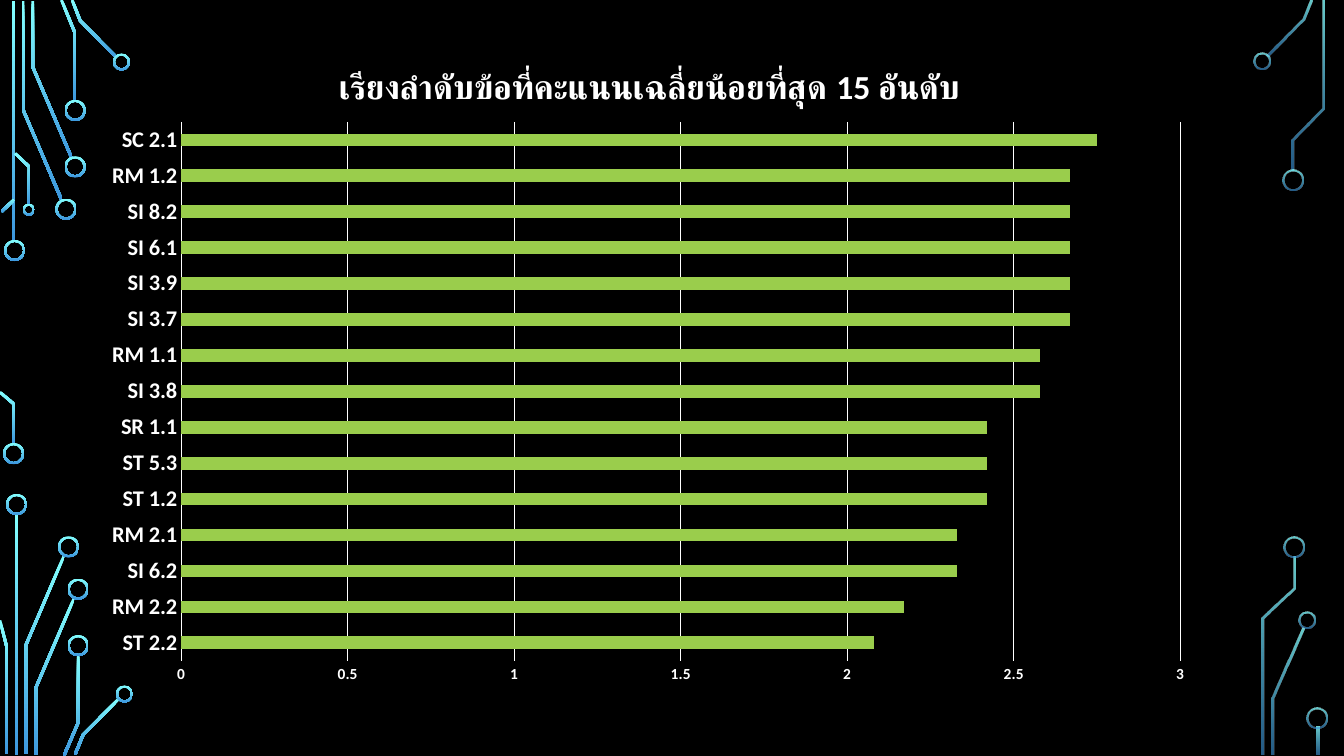
import math
from dataclasses import dataclass

import pptx
import pptx.chart.data
import pptx.dml.color
import pptx.enum.chart
import pptx.enum.shapes
import pptx.oxml
import pptx.oxml.ns
import pptx.util
from lxml import etree


@dataclass(frozen=True)
class Theme:
    background: str = "000000"
    text: str = "FFFFFF"
    bar: str = "9ACD4C"
    trace_top: str = "82FFFF"
    trace_bottom: str = "3D97DE"
    font: str = "Calibri"
    title_size: int = 24
    category_size: int = 16
    value_size: int = 11
    chart_size: int = 10
    line_width: float = 0.75


COLUMNS, ROWS = 1333, 750
TRACE_WIDTH = 2.75
RING_WIDTH = 2
BRIGHT = (100, 100)
DIM = (80, 60)

TITLE = "เรียงลำดับข้อที่คะแนนเฉลี่ยน้อยที่สุด 15 อันดับ"
SCORES = [
    ("ST 2.2", 2.08), ("RM 2.2", 2.17), ("SI 6.2", 2.33), ("RM 2.1", 2.33),
    ("ST 1.2", 2.42), ("ST 5.3", 2.42), ("SR 1.1", 2.42), ("SI 3.8", 2.58),
    ("RM 1.1", 2.58), ("SI 3.7", 2.67), ("SI 3.9", 2.67), ("SI 6.1", 2.67),
    ("SI 8.2", 2.67), ("RM 1.2", 2.67), ("SC 2.1", 2.75),
]
PLOT_PERCENT = {"x": 8.09, "y": 12.58, "w": 89.44, "h": 82}

LEFT_STEMS = [(12, 1, 239), (15, 510, 239)]
LEFT_TRACES = [
    [(61, 198), (23, 109), (23, 1)],
    [(71, 156.5), (32.5, 66.5), (32.5, 1)],
    [(74.5, 100), (74.5, 33), (61, 0)],
    [(115.5, 57), (79.5, 20.5), (71.5, 0)],
    [(1.5, 210), (14, 198)],
    [(14, 441), (14, 401), (0, 389)],
    [(29, 203), (29, 165.5), (15, 152)],
    [(25.5, 748), (25.5, 640.5), (63.5, 551.5)],
    [(6.5, 748), (6.5, 641), (0, 615.5)],
    [(35.5, 749), (35.5, 682.5), (73.5, 593.5)],
    [(63.5, 749.5), (77.5, 717), (77.5, 650)],
    [(74.5, 748.5), (82.5, 729), (118, 693)],
]
LEFT_RINGS = [
    (14.5, 248.5, 21), (13.5, 450, 21), (65.5, 207.5, 21), (74.5, 165.5, 21),
    (74.5, 109.5, 21), (120.5, 61.5, 17), (28.5, 208, 12), (16.5, 500.5, 21),
    (68, 542.5, 21), (77.5, 584.5, 21), (77.5, 640.5, 21), (123.5, 688.5, 17),
]
RIGHT_STEMS = [(1306, 721, 28)]
RIGHT_TRACES = [
    [(1257, 55.5), (1292.5, 19.5), (1300.5, 0.5)],
    [(1262.5, 749), (1262.5, 693), (1293, 623.5)],
    [(1282, 169), (1282, 138.5), (1312.5, 107.5), (1312.5, 1)],
    [(1252.5, 749), (1252.5, 613.5), (1283.5, 583.5), (1283.5, 552)],
]
RIGHT_RINGS = [
    (1251.5, 60.5, 17), (1282.5, 178.5, 21), (1296.5, 615.5, 17),
    (1283, 542.5, 21), (1306.5, 712, 21),
]


def rgb(color):
    return pptx.dml.color.RGBColor.from_string(color)


def trace_outline(points, width):
    normals = []
    for (x1, y1), (x2, y2) in zip(points, points[1:]):
        length = math.hypot(x2 - x1, y2 - y1)
        normals.append(((y1 - y2) / length, (x2 - x1) / length))
    near, far = [], []
    for (x, y), (ax, ay), (bx, by) in zip(points, normals[:1] + normals, normals + normals[-1:]):
        scale = width / 2 / (1 + ax * bx + ay * by)
        dx, dy = (ax + bx) * scale, (ay + by) * scale
        near.append((x + dx, y + dy))
        far.append((x - dx, y - dy))
    return near + far[::-1]


class SlideBuilder:
    def __init__(self, presentation, theme):
        self.theme = theme
        self.column = presentation.slide_width / COLUMNS
        self.row = presentation.slide_height / ROWS
        self.slide = presentation.slides.add_slide(presentation.slide_layouts[6])
        self.slide.background.fill.solid()
        self.slide.background.fill.fore_color.rgb = rgb(theme.background)

    def place(self, x, y):
        return round(x * self.column), round(y * self.row)

    def glow(self, shape, opacities):
        shape.shadow.inherit = False
        shape.line.fill.background()
        shape.fill.gradient()
        shape.fill.gradient_angle = 270
        colors = (self.theme.trace_top, self.theme.trace_bottom)
        for stop, color, position in zip(shape.fill.gradient_stops, colors, (0, 1)):
            stop.color.rgb = rgb(color)
            stop.position = position
        color_elements = shape._element.spPr.iter(pptx.oxml.ns.qn("a:srgbClr"))
        for element, opacity in zip(color_elements, opacities):
            if opacity < 100:
                alpha = etree.SubElement(element, pptx.oxml.ns.qn("a:alpha"))
                alpha.set("val", str(opacity * 1000))

    def preset(self, kind, left, top, width, height, opacities):
        shape = self.slide.shapes.add_shape(
            kind, *self.place(left, top), *self.place(width, height))
        self.glow(shape, opacities)
        return shape

    def stem(self, left, top, height, opacities):
        self.preset(pptx.enum.shapes.MSO_SHAPE.RECTANGLE,
                    left, top, TRACE_WIDTH, height, opacities)

    def ring(self, x, y, size, opacities):
        shape = self.preset(pptx.enum.shapes.MSO_SHAPE.DONUT,
                            x - size / 2, y - size / 2, size, size, opacities)
        shape.adjustments[0] = RING_WIDTH / size

    def trace(self, points, opacities):
        start, *others = [self.place(*point) for point in trace_outline(points, TRACE_WIDTH)]
        builder = self.slide.shapes.build_freeform(*start)
        builder.add_line_segments(others, close=True)
        self.glow(builder.convert_to_shape(), opacities)

    def circuit(self, stems, traces, rings, opacities):
        for stem in stems:
            self.stem(*stem, opacities)
        for points in traces:
            self.trace(points, opacities)
        for ring in rings:
            self.ring(*ring, opacities)

    def style_font(self, font, size, bold):
        font.name = self.theme.font
        font.size = pptx.util.Pt(size)
        font.bold = bold
        font.color.rgb = rgb(self.theme.text)

    def style_line(self, line):
        line.color.rgb = rgb(self.theme.text)
        line.width = pptx.util.Pt(self.theme.line_width)

    def bar_chart(self, left, top, width, height):
        data = pptx.chart.data.CategoryChartData()
        data.categories = [name for name, score in SCORES]
        data.add_series("Series 1", [score for name, score in SCORES])
        chart = self.slide.shapes.add_chart(
            pptx.enum.chart.XL_CHART_TYPE.BAR_CLUSTERED,
            *self.place(left, top), *self.place(width, height), data).chart
        self.style_font(chart.font, self.theme.chart_size, False)
        chart.has_legend = False
        chart.has_title = True
        chart.chart_title.include_in_layout = False
        paragraph = chart.chart_title.text_frame.paragraphs[0]
        paragraph.text = TITLE
        self.style_font(paragraph.font, self.theme.title_size, True)

        plot = chart.plots[0]
        plot.gap_width = 182
        plot.vary_by_categories = False
        bars = plot.series[0].format.fill
        bars.solid()
        bars.fore_color.rgb = rgb(self.theme.bar)

        sizes = (self.theme.category_size, self.theme.value_size)
        for axis, size in zip((chart.category_axis, chart.value_axis), sizes):
            axis.major_tick_mark = pptx.enum.chart.XL_TICK_MARK.NONE
            axis.minor_tick_mark = pptx.enum.chart.XL_TICK_MARK.NONE
            self.style_font(axis.tick_labels.font, size, True)
        self.style_line(chart.category_axis.format.line)
        values = chart.value_axis
        values.minimum_scale, values.maximum_scale, values.major_unit = 0, 3, 0.5
        values.format.line.fill.background()
        self.style_line(values.major_gridlines.format.line)
        self.plot_layout(chart)

    def plot_layout(self, chart):
        plot_area = chart._chartSpace.chart.plotArea
        for old_layout in plot_area.findall(pptx.oxml.ns.qn("c:layout")):
            plot_area.remove(old_layout)
        settings = {"layoutTarget": "inner", "xMode": "edge", "yMode": "edge"}
        settings.update((key, percent / 100) for key, percent in PLOT_PERCENT.items())
        children = "".join(f'<c:{key} val="{value}"/>' for key, value in settings.items())
        plot_area.insert(0, pptx.oxml.parse_xml(
            f'<c:layout {pptx.oxml.ns.nsdecls("c")}>'
            f"<c:manualLayout>{children}</c:manualLayout></c:layout>"))


def main():
    presentation = pptx.Presentation()
    presentation.slide_width = pptx.util.Inches(13.33)
    presentation.slide_height = pptx.util.Inches(7.5)
    builder = SlideBuilder(presentation, Theme())
    builder.circuit(LEFT_STEMS, LEFT_TRACES, LEFT_RINGS, BRIGHT)
    builder.circuit(RIGHT_STEMS, RIGHT_TRACES, RIGHT_RINGS, DIM)
    builder.bar_chart(90, 39, 1108, 652)
    presentation.save("out.pptx")


if __name__ == "__main__":
    main()
